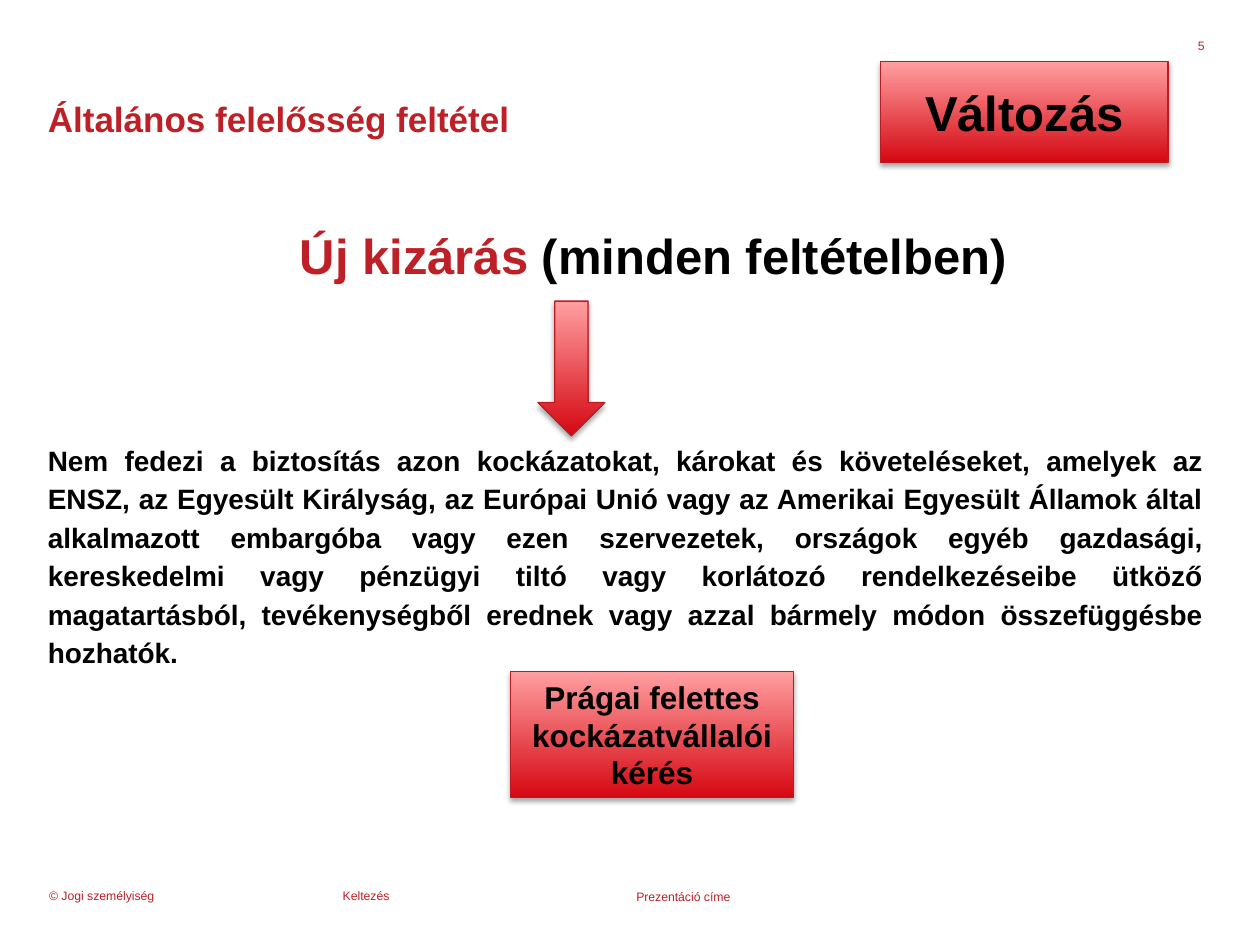
import dataclasses

import lxml.etree
import pptx
import pptx.dml.color
import pptx.enum.shapes
import pptx.enum.text
import pptx.oxml
import pptx.oxml.ns
import pptx.util

Rgb = pptx.dml.color.RGBColor.from_string
Pt = pptx.util.Pt
Align = pptx.enum.text.PP_ALIGN
Anchor = pptx.enum.text.MSO_ANCHOR
Kind = pptx.enum.shapes.MSO_SHAPE
COLS, ROWS = 100, 75


@dataclasses.dataclass(frozen=True)
class Theme:
    """Colours, font and type sizes of the slide."""
    font: str = "Arial"
    red: str = "BD2027"
    ink: str = "000000"
    edge: str = "BD1B23"
    deep: str = "D50812"
    pale: str = "FF9FA1"
    tiny: int = 7
    body: int = 16
    note: int = 18
    title: int = 20
    large: int = 28
    lead: int = 22


THEME = Theme()
WIDTH, HEIGHT = pptx.util.Inches(10), pptx.util.Inches(7.5)


def inner(box, left, top, width, height):
    """Return a box in grid units placed relative to its parent box."""
    return box[0] + left, box[1] + top, width, height


def spot(box):
    """Turn a box of columns and rows into slide lengths."""
    units = (WIDTH / COLS, HEIGHT / ROWS) * 2
    return [round(size * unit) for size, unit in zip(box, units)]


def write(frame, *runs, size=THEME.tiny, bold=False, align=Align.LEFT,
          lead=None, anchor=Anchor.TOP, margin=0):
    """Write (text, colour) runs as one formatted paragraph."""
    frame.word_wrap = True
    frame.auto_size = pptx.enum.text.MSO_AUTO_SIZE.NONE
    frame.vertical_anchor = anchor
    frame.margin_left = frame.margin_right = Pt(margin)
    frame.margin_top = frame.margin_bottom = Pt(margin / 2)
    para = frame.paragraphs[0]
    para.alignment = align
    para.line_spacing = lead
    for text, color in runs:
        run = para.add_run()
        run.text = text
        run.font.name = THEME.font
        run.font.size = Pt(size)
        run.font.bold = bold
        run.font.color.rgb = Rgb(color)


def label(slide, box, *runs, **form):
    """Add a text box with formatted runs."""
    write(slide.shapes.add_textbox(*spot(box)).text_frame, *runs, **form)


def block(slide, kind, box):
    """Add a red gradient shape with a soft drop shadow."""
    shape = slide.shapes.add_shape(kind, *spot(box))
    shape.shadow.inherit = False
    shape.fill.gradient()
    shape.fill.gradient_angle = 90
    for stop, color in zip(shape.fill.gradient_stops, (THEME.deep, THEME.pale)):
        stop.color.rgb = Rgb(color)
    shape.line.color.rgb = Rgb(THEME.edge)
    shape.line.width = Pt(0.75)
    tag = pptx.oxml.ns.qn
    effect = shape.element.spPr.find(tag("a:effectLst"))
    shade = lxml.etree.SubElement(
        effect, tag("a:outerShdw"), blurRad=str(Pt(3.1)), dist=str(Pt(1.8)),
        dir="5400000", rotWithShape="0")
    tone = lxml.etree.SubElement(shade, tag("a:srgbClr"), val=THEME.ink)
    lxml.etree.SubElement(tone, tag("a:alpha"), val="35000")
    return shape


def badge(slide, box, text, size):
    """Add a red box with centred bold text."""
    shape = block(slide, Kind.RECTANGLE, box)
    write(shape.text_frame, (text, THEME.ink), size=size, bold=True,
          align=Align.CENTER, anchor=Anchor.MIDDLE, margin=7.2)


def header(slide, box):
    """Place the page number, the title and the change badge."""
    label(slide, inner(box, 89.6, 0, 2.2, 2), ("5", THEME.red), align=Align.RIGHT)
    title = slide.shapes.title
    title.left, title.top, title.width, title.height = spot(
        inner(box, 0, 5, box[2], 2.6))
    write(title.text_frame, ("Általános felelősség feltétel", THEME.red),
          size=THEME.title, bold=True, lead=Pt(THEME.lead))
    badge(slide, inner(box, 66.1, 1.9, 22.8, 8), "Változás", THEME.large)


def clause(slide, box):
    """Place the heading, the arrow, the exclusion text and the note."""
    label(slide, inner(box, 20, 0, 71.7, 3.1), ("Új kizárás ", THEME.red),
          ("(minden feltételben)", THEME.ink),
          size=THEME.large, bold=True, lead=Pt(THEME.lead))
    block(slide, Kind.DOWN_ARROW, inner(box, 38.9, 4.4, 5.3, 10.7))
    text = (
        "Nem fedezi a biztosítás azon kockázatokat, károkat és követeléseket, "
        "amelyek az ENSZ, az Egyesült Királyság, az Európai Unió vagy az "
        "Amerikai Egyesült Államok által alkalmazott embargóba vagy ezen "
        "szervezetek, országok egyéb gazdasági, kereskedelmi vagy pénzügyi "
        "tiltó vagy korlátozó rendelkezéseibe ütköző magatartásból, "
        "tevékenységből erednek vagy azzal bármely módon összefüggésbe hozhatók."
    )
    label(slide, inner(box, 0, 15.3, box[2], 18.3), (text, THEME.ink),
          size=THEME.body, bold=True, align=Align.JUSTIFY, lead=Pt(THEME.lead))
    badge(slide, inner(box, 36.7, 33.8, 22.5, 10),
          "Prágai felettes kockázatvállalói kérés", THEME.note)


def footer(slide, box):
    """Place the three footer labels at equal steps."""
    parts = (("© Jogi személyiség", 8.7, 0.96), ("Keltezés", 8.7, 0.96),
             ("Prezentáció címe", 31.7, None))
    for index, (text, width, lead) in enumerate(parts):
        label(slide, inner(box, 0.1 + 23.3 * index, 0, width, box[3]),
              (text, THEME.red), lead=lead)


def main():
    """Build and save the slide."""
    deck = pptx.Presentation()
    deck.slide_width, deck.slide_height = WIDTH, HEIGHT
    slide = deck.slides.add_slide(deck.slide_layouts.get_by_name("Title Only"))
    header(slide, (3.8, 3, 91.7, 10))
    clause(slide, (3.8, 19.5, 91.7, 44))
    footer(slide, (3.8, 70.6, 91.7, 1.2))
    deck.save("out.pptx")


if __name__ == "__main__":
    main()
